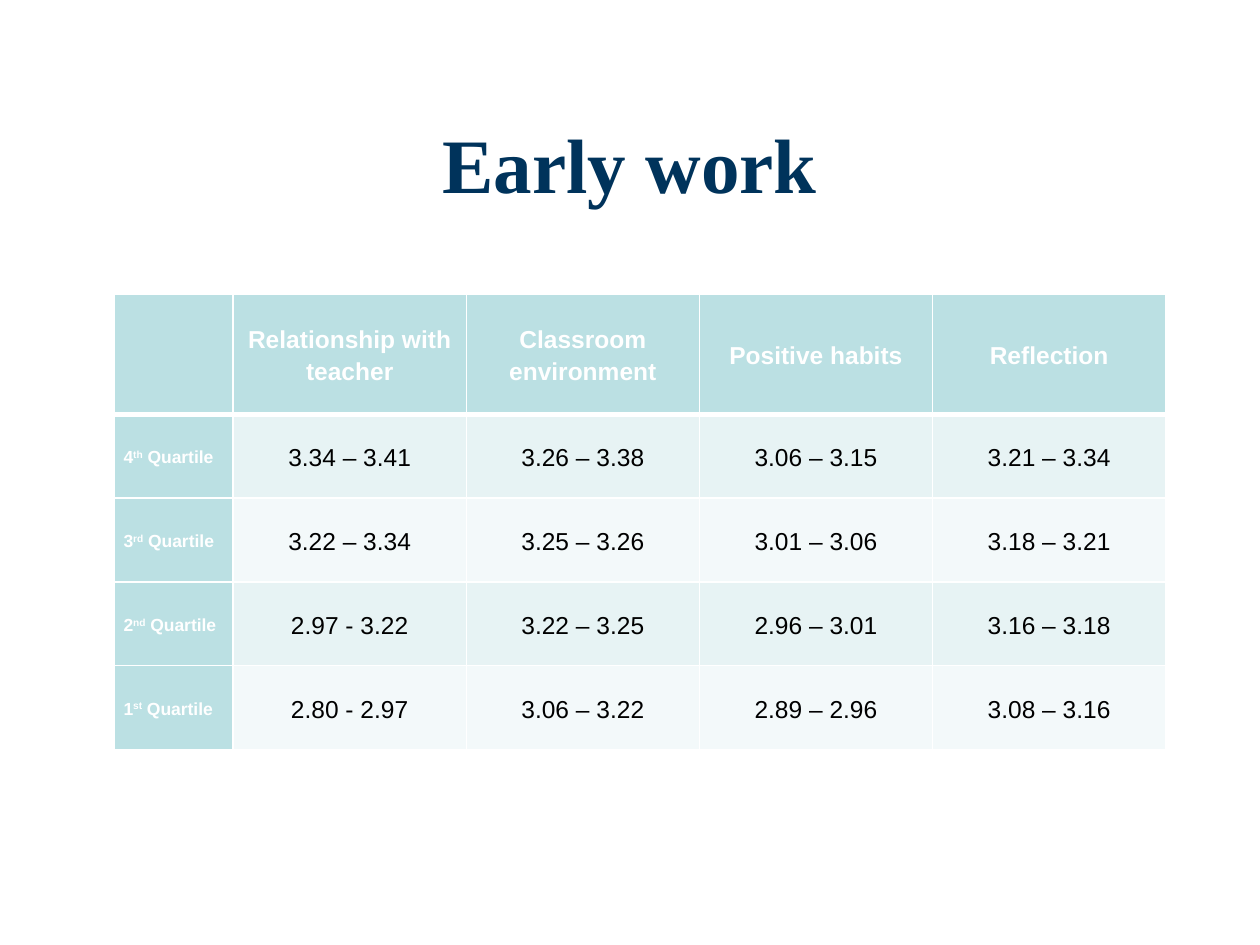
import pptx
import pptx.util
import pptx.dml.color
import pptx.enum.text
import pptx.oxml
import pptx.oxml.ns
from dataclasses import dataclass

Cm = pptx.util.Cm
Pt = pptx.util.Pt
RGB = pptx.dml.color.RGBColor.from_string
MIDDLE = pptx.enum.text.MSO_ANCHOR.MIDDLE
ALIGN = pptx.enum.text.PP_ALIGN


@dataclass(frozen=True)
class Theme:
    navy: str = "00335B"
    teal: str = "BBE0E3"
    bands: tuple = ("E7F3F4", "F3F9FA")
    white: str = "FFFFFF"
    black: str = "000000"
    serif: str = "Times New Roman"
    sans: str = "Arial"
    title_size: int = 44
    body_size: int = 14
    label_size: int = 10


theme = Theme()


def style_run(run, font, size, color, bold):
    run.font.name = font
    run.font.size = Pt(size)
    run.font.color.rgb = RGB(color)
    run.font.bold = bold


def add_border(cell, side, points):
    cell._tc.get_or_add_tcPr().append(pptx.oxml.parse_xml(
        f'<a:ln{side} {pptx.oxml.ns.nsdecls("a")} w="{Pt(points)}"><a:solidFill>'
        f'<a:srgbClr val="{theme.white}"/></a:solidFill></a:ln{side}>'))


deck = pptx.Presentation()
deck.slide_width, deck.slide_height = Cm(25.4), Cm(19.05)
slide = deck.slides.add_slide(deck.slide_layouts[6])

heading = slide.shapes.add_textbox(Cm(1.9), Cm(1.7), Cm(21.6), Cm(3.18)).text_frame
heading.word_wrap = True
heading.vertical_anchor = MIDDLE
heading.text = "Early work"
heading.paragraphs[0].alignment = ALIGN.CENTER
style_run(heading.paragraphs[0].runs[0], theme.serif, theme.title_size, theme.navy, True)

topics = ["", "Relationship with teacher", "Classroom environment", "Positive habits", "Reflection"]
quartiles = [
    (("4", "th", " Quartile"), "3.34 – 3.41", "3.26 – 3.38", "3.06 – 3.15", "3.21 – 3.34"),
    (("3", "rd", " Quartile"), "3.22 – 3.34", "3.25 – 3.26", "3.01 – 3.06", "3.18 – 3.21"),
    (("2", "nd", " Quartile"), "2.97 - 3.22", "3.22 – 3.25", "2.96 – 3.01", "3.16 – 3.18"),
    (("1", "st", " Quartile"), "2.80 - 2.97", "3.06 – 3.22", "2.89 – 2.96", "3.08 – 3.16"),
]
rows = [topics, *quartiles]
column_widths = [2.39] + [4.7] * 4
row_heights = [2.42] + [1.69] * 4

scores = slide.shapes.add_table(
    len(rows), len(topics), Cm(2.31), Cm(5.93),
    Cm(sum(column_widths)), Cm(sum(row_heights))).table
for column, width in zip(scores.columns, column_widths):
    column.width = Cm(width)
for row, height in zip(scores.rows, row_heights):
    row.height = Cm(height)

for r, entries in enumerate(rows):
    for c, entry in enumerate(entries):
        cell = scores.cell(r, c)
        is_heading = r == 0 or c == 0
        is_quartile = r > 0 and c == 0
        cell.margin_left = cell.margin_right = Cm(0.18)
        cell.margin_top = cell.margin_bottom = Cm(0)
        cell.vertical_anchor = MIDDLE
        for side, points in (("L", 1), ("R", 1), ("T", 3 if r == 1 else 1), ("B", 3 if r == 0 else 1)):
            add_border(cell, side, points)
        cell.fill.solid()
        cell.fill.fore_color.rgb = RGB(theme.teal if is_heading else theme.bands[(r - 1) % 2])

        line = cell.text_frame.paragraphs[0]
        line.line_spacing = 1.15
        line.alignment = ALIGN.LEFT if is_quartile else ALIGN.CENTER
        for part in entry if is_quartile else filter(None, [entry]):
            run = line.add_run()
            run.text = part
            style_run(run, theme.sans, theme.label_size if is_quartile else theme.body_size,
                      theme.white if is_heading else theme.black, is_heading)
        if is_quartile:
            line.runs[1]._r.get_or_add_rPr().set("baseline", "30000")

deck.save("out.pptx")
